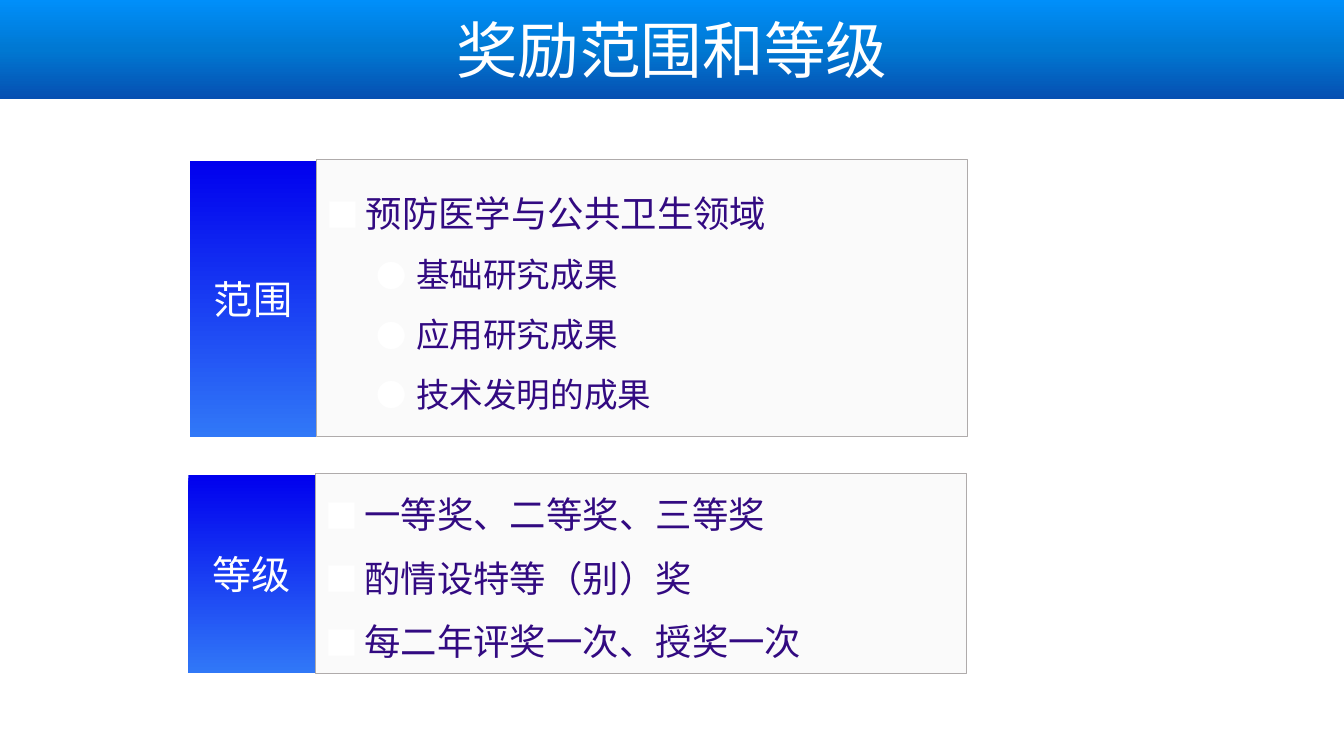
from dataclasses import dataclass

from lxml.etree import SubElement
from pptx import Presentation
from pptx.dml.color import RGBColor as RGB
from pptx.enum.shapes import MSO_SHAPE as Shape
from pptx.enum.text import MSO_ANCHOR as Anchor, MSO_AUTO_SIZE as AutoSize, PP_ALIGN as Align
from pptx.oxml.ns import qn
from pptx.util import Pt


@dataclass(frozen=True)
class Theme:
    cjk_font: str = "Noto Sans CJK SC"
    title_font: str = "Times New Roman"
    white: str = "FFFFFF"
    ink: str = "320A81"
    panel: str = "FAFAFA"
    border: str = "AFABAB"
    # Gradients run from top to bottom
    banner: tuple = ("008FFA", "0078D2", "0650B2")
    label: tuple = ("0000EE", "3178F7")
    title_size: int = 44
    label_size: int = 28
    list_sizes: tuple = (26, 24)
    bullets: tuple = ("■", "●")
    indents: tuple = (28, 64)
    hanging: int = 28


class SlideBuilder:
    def __init__(self, slide, theme):
        self.slide = slide
        self.theme = theme

    def place(self, shape, left, top, width, height):
        shape.left, shape.top = Pt(left), Pt(top)
        shape.width, shape.height = Pt(width), Pt(height)

    def gradient(self, shape, colours):
        shape.fill.gradient()
        shape.fill.gradient_angle = 270
        stops = shape._element.spPr.find(".//" + qn("a:gsLst"))
        stops.clear()
        for index, colour in enumerate(colours):
            position = 100000 * index // (len(colours) - 1)
            stop = SubElement(stops, qn("a:gs"), pos=str(position))
            SubElement(stop, qn("a:srgbClr"), val=colour)

    def frame(self, shape):
        frame = shape.text_frame
        frame.word_wrap = True
        frame.auto_size = AutoSize.NONE
        frame.vertical_anchor = Anchor.MIDDLE
        return frame

    def style(self, paragraph, size, colour, latin=None):
        font = paragraph.font
        font.size = Pt(size)
        font.color.rgb = RGB.from_string(colour)
        font.name = latin or self.theme.cjk_font
        east_asian = SubElement(paragraph._p.pPr.find(qn("a:defRPr")), qn("a:ea"))
        east_asian.set("typeface", self.theme.cjk_font)

    def bullet(self, paragraph, level):
        props = paragraph._p.get_or_add_pPr()
        props.set("marL", str(Pt(self.theme.indents[level])))
        props.set("indent", str(-Pt(self.theme.hanging)))
        colour = SubElement(props, qn("a:buClr"))
        SubElement(colour, qn("a:srgbClr"), val=self.theme.white)
        SubElement(props, qn("a:buSzPct"), val="90000")
        SubElement(props, qn("a:buFont"), typeface=self.theme.cjk_font)
        SubElement(props, qn("a:buChar"), char=self.theme.bullets[level])

    def title(self, text, *box):
        banner = self.slide.shapes.title
        self.place(banner, *box)
        self.gradient(banner, self.theme.banner)
        heading = self.frame(banner).paragraphs[0]
        heading.text = text
        heading.alignment = Align.CENTER
        self.style(heading, self.theme.title_size, self.theme.white, self.theme.title_font)

    def label(self, text, *box):
        label = self.slide.shapes.add_shape(Shape.RECTANGLE, *map(Pt, box))
        label.shadow.inherit = False
        label.line.fill.background()
        self.gradient(label, self.theme.label)
        caption = self.frame(label).paragraphs[0]
        caption.text = text
        caption.alignment = Align.CENTER
        caption.space_after = Pt(4)
        self.style(caption, self.theme.label_size, self.theme.white)

    def panel(self, placeholder_index, items, *box):
        panel = self.slide.placeholders[placeholder_index]
        self.place(panel, *box)
        panel.fill.solid()
        panel.fill.fore_color.rgb = RGB.from_string(self.theme.panel)
        panel.line.color.rgb = RGB.from_string(self.theme.border)
        panel.line.width = Pt(0.5)
        frame = self.frame(panel)
        for index, (level, text) in enumerate(items):
            item = frame.add_paragraph() if index else frame.paragraphs[0]
            item.text = text
            item.level = level
            item.line_spacing = 1.2
            item.space_before, item.space_after = Pt(2), Pt(6)
            self.bullet(item, level)
            self.style(item, self.theme.list_sizes[level], self.theme.ink)


def main():
    deck = Presentation()
    deck.slide_width, deck.slide_height = Pt(960), Pt(540)
    two_content = deck.slide_layouts[3]
    builder = SlideBuilder(deck.slides.add_slide(two_content), Theme())

    # Title banner
    builder.title("奖励范围和等级", 0, 0, 960, 70.5)

    # Each section: label, left edge, top, height, list of (level, text)
    sections = [
        ("范围", 135.5, 114, 198, [
            (0, "预防医学与公共卫生领域"),
            (1, "基础研究成果"),
            (1, "应用研究成果"),
            (1, "技术发明的成果"),
        ]),
        ("等级", 134.5, 338, 143, [
            (0, "一等奖、二等奖、三等奖"),
            (0, "酌情设特等（别）奖"),
            (0, "每二年评奖一次、授奖一次"),
        ]),
    ]
    label_width, panel_width = 90.5, 465
    for index, (name, left, top, height, items) in enumerate(sections, start=1):
        builder.label(name, left, top + 1, label_width, height - 1)
        builder.panel(index, items, left + label_width, top, panel_width, height)

    deck.save("out.pptx")


if __name__ == "__main__":
    main()
